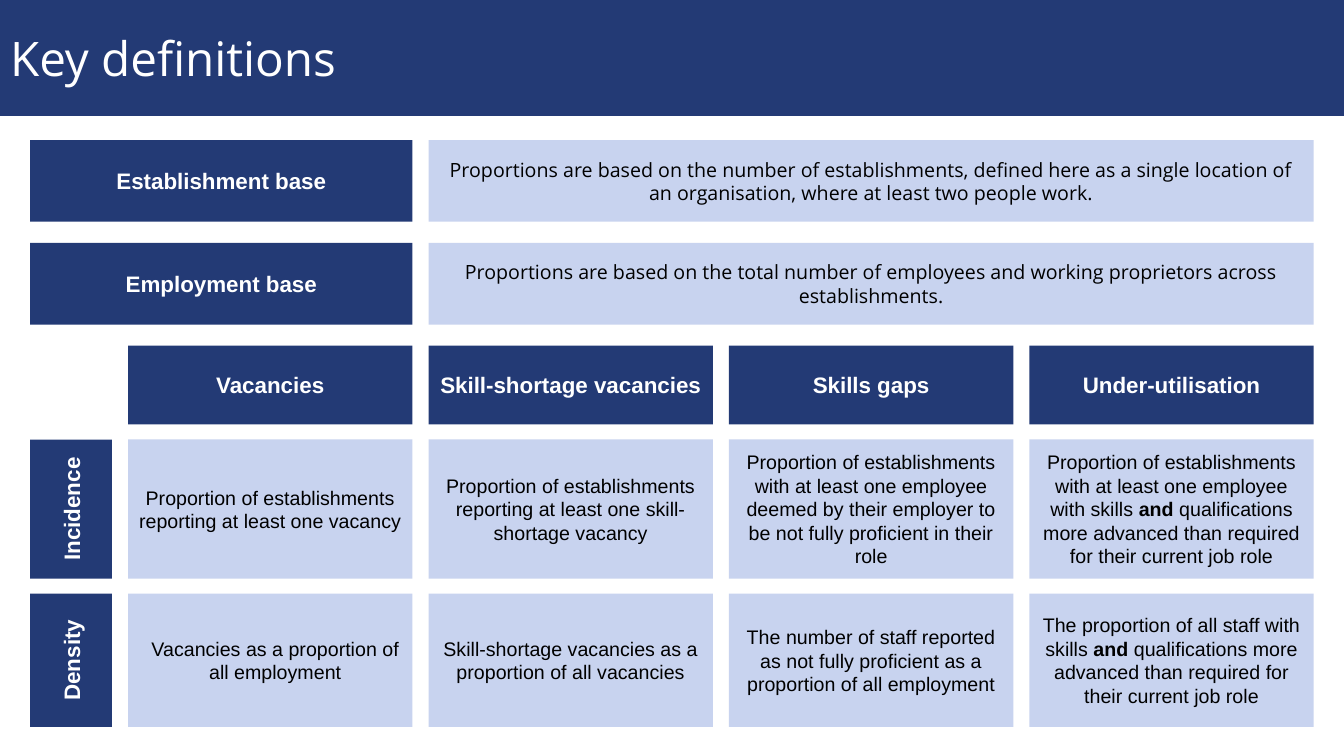
from pptx import Presentation
from pptx.dml.color import RGBColor
from pptx.enum.shapes import MSO_SHAPE
from pptx.enum.text import MSO_ANCHOR, PP_ALIGN
from pptx.util import Inches, Pt

NAVY = RGBColor(0x23, 0x3A, 0x75)
PALE_BLUE = RGBColor(0xC8, 0xD3, 0xEF)
WHITE = RGBColor(0xFF, 0xFF, 0xFF)
BLACK = RGBColor(0, 0, 0)

# Grid, in inches
LEFT, RIGHT = 0.3, 13.03
COLUMN_LEFT, COLUMN_STEP, COLUMN_WIDTH = 1.27, 2.98, 2.82
BAR_HEIGHT = 0.81
HEADER_TOP, HEADER_HEIGHT = 3.43, 0.78
columns = [COLUMN_LEFT + COLUMN_STEP * index for index in range(4)]

presentation = Presentation()
presentation.slide_width = Inches(13.33)
presentation.slide_height = Inches(7.5)
slide = presentation.slides.add_slide(presentation.slide_layouts[5])


def add_box(left, top, width, height, text, heading=False, font_name="Arial"):
    """Add a filled box; words between asterisks are bold."""
    shape = slide.shapes.add_shape(
        MSO_SHAPE.RECTANGLE, Inches(left), Inches(top), Inches(width), Inches(height))
    shape.shadow.inherit = False
    shape.fill.solid()
    shape.fill.fore_color.rgb = NAVY if heading else PALE_BLUE
    shape.line.fill.background()
    shape.text_frame.word_wrap = True
    shape.text_frame.vertical_anchor = MSO_ANCHOR.MIDDLE
    paragraph = shape.text_frame.paragraphs[0]
    paragraph.alignment = PP_ALIGN.CENTER
    paragraph.font.name = font_name
    paragraph.font.size = Pt(16 if heading else 14)
    paragraph.font.color.rgb = WHITE if heading else BLACK
    paragraph.font.bold = heading
    for index, part in enumerate(text.split("*")):
        run = paragraph.add_run()
        run.text = part
        if index % 2:
            run.font.bold = True
    return shape


# Title band
title = slide.shapes.title
title.left, title.top = 0, 0
title.width, title.height = presentation.slide_width, Inches(1.15)
title.fill.solid()
title.fill.fore_color.rgb = NAVY
title.text_frame.text = "Key definitions"
title.text_frame.vertical_anchor = MSO_ANCHOR.MIDDLE
title_paragraph = title.text_frame.paragraphs[0]
title_paragraph.alignment = PP_ALIGN.LEFT
title_paragraph.font.name = "Open Sans"
title_paragraph.font.size = Pt(34)
title_paragraph.font.color.rgb = WHITE

# Bases: name on the left, definition across the other three columns
bases = [
    (1.39, "Establishment base",
     "Proportions are based on the number of establishments, defined here as a "
     "single location of an organisation, where at least two people work."),
    (2.41, "Employment base",
     "Proportions are based on the total number of employees and working "
     "proprietors across establishments."),
]
for top, name, definition in bases:
    add_box(LEFT, top, columns[0] + COLUMN_WIDTH - LEFT, BAR_HEIGHT, name, heading=True)
    add_box(columns[1], top, RIGHT - columns[1], BAR_HEIGHT, definition,
            font_name="Open Sans")

# Column headings
measures = ["Vacancies", "Skill-shortage vacancies", "Skills gaps", "Under-utilisation"]
for left, measure in zip(columns, measures):
    add_box(left, HEADER_TOP, COLUMN_WIDTH, HEADER_HEIGHT, measure, heading=True)

# Definition rows, each with a heading turned to read upwards
rows = [
    (4.36, 1.38, "Incidence", [
        "Proportion of establishments reporting at least one vacancy",
        "Proportion of establishments reporting at least one skill-shortage vacancy",
        "Proportion of establishments with at least one employee deemed by their "
        "employer to be not fully proficient in their role",
        "Proportion of establishments with at least one employee with skills *and* "
        "qualifications more advanced than required for their current job role",
    ]),
    (5.89, 1.32, "Density", [
        "Vacancies as a proportion of all employment",
        "Skill-shortage vacancies as a proportion of all vacancies",
        "The number of staff reported as not fully proficient as a proportion of "
        "all employment",
        "The proportion of all staff with skills *and* qualifications more advanced "
        "than required for their current job role",
    ]),
]
for top, height, name, definitions in rows:
    turn = (height - BAR_HEIGHT) / 2
    row_heading = add_box(LEFT - turn, top + turn, height, BAR_HEIGHT, name, heading=True)
    row_heading.rotation = 270
    cells = [add_box(left, top, COLUMN_WIDTH, height, definition)
             for left, definition in zip(columns, definitions)]

# The first density definition has a left indent
density_paragraph = cells[0].text_frame.paragraphs[0]
density_paragraph._p.get_or_add_pPr().set("marL", str(Inches(0.1)))

presentation.save("out.pptx")
